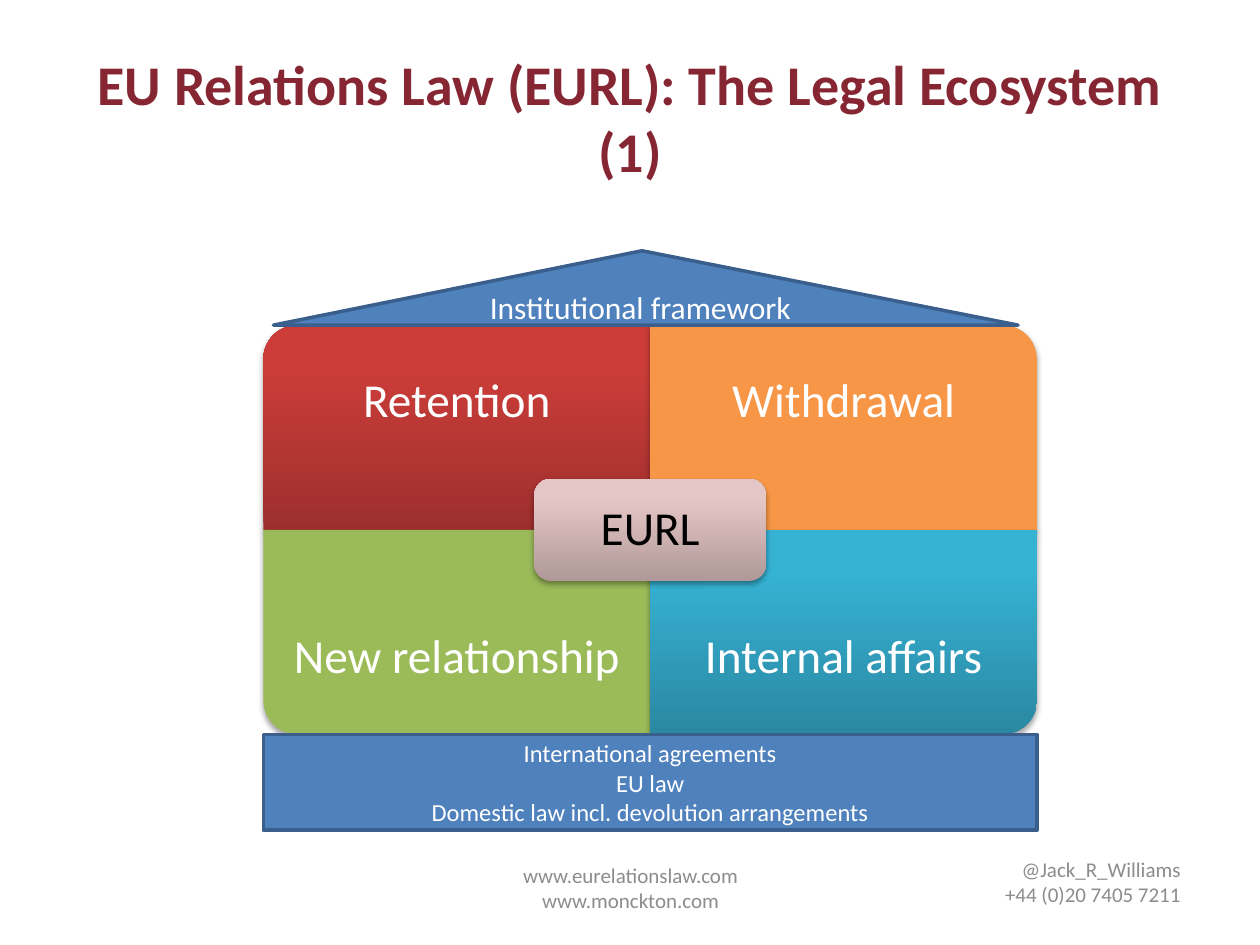
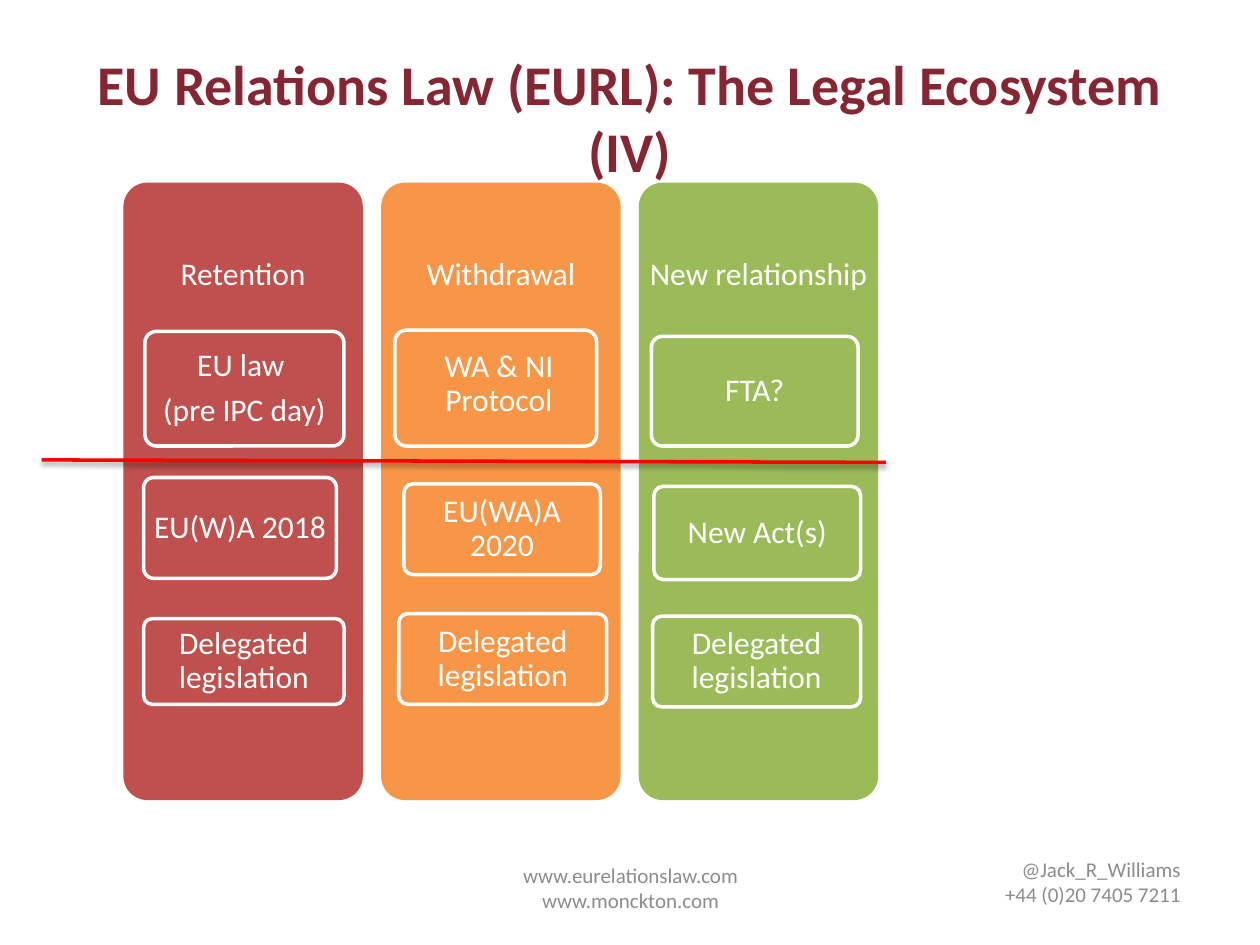
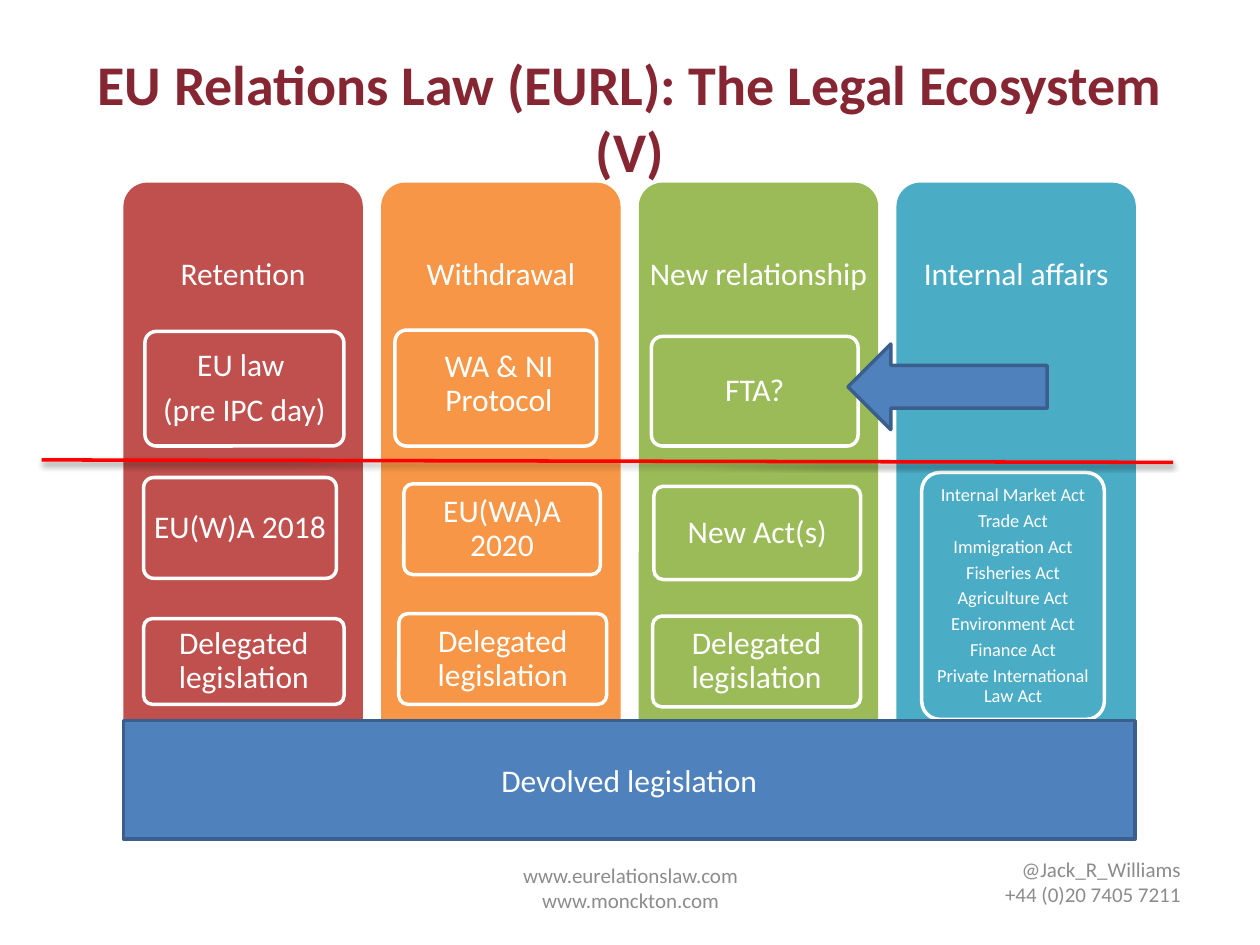
from lxml import etree
from pptx import Presentation
from pptx.dml.color import RGBColor
from pptx.enum.shapes import MSO_CONNECTOR, MSO_SHAPE
from pptx.enum.text import MSO_ANCHOR, PP_ALIGN
from pptx.oxml.ns import qn
from pptx.util import Inches, Pt

RECT = MSO_SHAPE.RECTANGLE
ROUNDED = MSO_SHAPE.ROUNDED_RECTANGLE
ONE_ROUND = MSO_SHAPE.ROUND_1_RECTANGLE
TRIANGLE = MSO_SHAPE.ISOSCELES_TRIANGLE
LEFT_ARROW = MSO_SHAPE.LEFT_ARROW
STRAIGHT = MSO_CONNECTOR.STRAIGHT
MIDDLE = MSO_ANCHOR.MIDDLE
CENTER, RIGHT = PP_ALIGN.CENTER, PP_ALIGN.RIGHT

FONT = "Calibri"
WHITE = RGBColor(0xFF, 0xFF, 0xFF)
BLACK = RGBColor(0x00, 0x00, 0x00)
CLARET = RGBColor(0x86, 0x26, 0x33)
GREY = RGBColor(0x8C, 0x8C, 0x8C)
BLUE = RGBColor(0x4F, 0x81, 0xBD)
DARK_BLUE = RGBColor(0x3A, 0x5F, 0x8C)
RED = RGBColor(0xC0, 0x50, 0x4D)
ORANGE = RGBColor(0xF7, 0x96, 0x46)
GREEN = RGBColor(0x9B, 0xBB, 0x59)
TEAL = RGBColor(0x4B, 0xAC, 0xC6)
LINE_RED = RGBColor(0xFF, 0x00, 0x00)
# Gradients run from bottom to top
RED_FADE = (RGBColor(0x9C, 0x2F, 0x2D), RGBColor(0xCC, 0x3D, 0x39))
TEAL_FADE = (RGBColor(0x2A, 0x88, 0xA2), RGBColor(0x36, 0xB2, 0xD3))
PINK_FADE = (RGBColor(0xB0, 0x99, 0x98), RGBColor(0xE5, 0xC6, 0xC6))

TITLE = "EU Relations Law (EURL): The Legal Ecosystem "
PLAIN_INSETS = (0.1, 0.05, 0.1, 0.05)
CARD_INSETS = (0.05, 0.04, 0.05, 0.04)
WIDE_INSETS = (0.13, 0.07, 0.13, 0.07)
DELEGATED = "Delegated legislation"

# Cards: offset from the column's corner, size, lines, font size, insets
COLUMNS = [
    ("Retention", RED, [
        ((0.17, 1.18, 1.58, 0.91), ["EU law ", "(pre IPC day)"], 18, CARD_INSETS),
        ((0.16, 2.34, 1.53, 0.8), ["EU(W)A 2018"], 18, CARD_INSETS),
        ((0.16, 3.46, 1.59, 0.68), [DELEGATED], 18, CARD_INSETS)]),
    ("Withdrawal", ORANGE, [
        ((0.11, 1.17, 1.6, 0.92), ["WA & NI Protocol"], 18, (0.17, 0.07, 0.12, 0.13)),
        ((0.18, 2.39, 1.56, 0.72), ["EU(WA)A 2020"], 18, WIDE_INSETS),
        ((0.14, 3.42, 1.65, 0.72), [DELEGATED], 18, WIDE_INSETS)]),
    ("New relationship", GREEN, [
        ((0.1, 1.22, 1.64, 0.87), ["FTA?"], 18, CARD_INSETS),
        ((0.12, 2.41, 1.64, 0.74), ["New Act(s)"], 18, CARD_INSETS),
        ((0.11, 3.44, 1.65, 0.72), [DELEGATED], 18, WIDE_INSETS)]),
    ("Internal affairs", TEAL, [
        ((0.2, 2.3, 1.45, 1.96),
         ["Internal Market Act", "Trade Act", "Immigration Act", "Fisheries Act",
          "Agriculture Act", "Environment Act", "Finance Act",
          "Private International Law Act"], 10.5, (0.03, 0.02, 0.03, 0.02))]),
]


def write(shape, lines, size, color=WHITE, align=CENTER, bold=False,
          insets=PLAIN_INSETS, tight=False):
    tf = shape.text_frame
    tf.word_wrap = True
    tf.vertical_anchor = MIDDLE
    (tf.margin_left, tf.margin_top,
     tf.margin_right, tf.margin_bottom) = map(Inches, insets)
    for i, line in enumerate(lines):
        p = tf.paragraphs[0] if i == 0 else tf.add_paragraph()
        p.text = line
        p.alignment = align
        if tight:
            p.line_spacing = 0.9
            p.space_after = Pt(0.33 * size)
        p.font.name, p.font.size = FONT, Pt(size)
        p.font.bold, p.font.color.rgb = bold, color


def add_text(s, box, lines, size, **style):
    write(s.shapes.add_textbox(*map(Inches, box)), lines, size, **style)


def add_box(s, kind, box, fill, line=None):
    """Add a shape filled with one colour, or with a (bottom, top) gradient."""
    sp = s.shapes.add_shape(kind, *map(Inches, box))
    sp.shadow.inherit = False
    if isinstance(fill, RGBColor):
        sp.fill.solid()
        sp.fill.fore_color.rgb = fill
    else:
        sp.fill.gradient()
        sp.fill.gradient_angle = 90
        for stop, color, position in zip(sp.fill.gradient_stops, fill, (0, 0.8)):
            stop.color.rgb, stop.position = color, position
        sp._element.spPr.find(qn("a:gradFill")).set("rotWithShape", "0")
    if line is None:
        sp.line.fill.background()
    else:
        sp.line.color.rgb, sp.line.width = line, Pt(2)
    return sp


def add_shadow(shape, opacity, distance):
    spPr = shape._element.spPr
    effects = spPr.find(qn("a:effectLst"))
    if effects is None:
        effects = etree.SubElement(spPr, qn("a:effectLst"))
    shadow = etree.SubElement(effects, qn("a:outerShdw"), blurRad=str(Pt(3.1)),
                              dist=str(Pt(distance)), dir="5400000", rotWithShape="0")
    color = etree.SubElement(shadow, qn("a:srgbClr"), val=str(BLACK))
    etree.SubElement(color, qn("a:alpha"), val=str(opacity * 1000))


def add_slide(prs, number):
    """Start a slide with the shared title and footers."""
    s = prs.slides.add_slide(prs.slide_layouts[6])
    add_text(s, (0.5, 0.3, 9, 1.25), [f"{TITLE}({number})"], 32, color=CLARET, bold=True)
    add_text(s, (3.42, 6.74, 3.17, 0.61),
             ["www.eurelationslaw.com", "www.monckton.com"], 12, color=GREY)
    add_text(s, (7.14, 6.66, 2.33, 0.67),
             ["@Jack_R_Williams", "+44 (0)20 7405 7211"], 12, color=GREY, align=RIGHT)
    return s


def add_quadrants(s, box):
    """Four tiles, each with its outer corner rounded, around a central label."""
    x, y, w, h = box
    tile_w, tile_h, label_h = w / 2, h / 2, 1.22
    tiles = [("Retention", RED_FADE, 0, 0, 270), ("Withdrawal", ORANGE, 1, 0, 0),
             ("New relationship", GREEN, 0, 1, 180), ("Internal affairs", TEAL_FADE, 1, 1, 90)]
    for label, fill, col, row, turn in tiles:
        left, top = x + col * tile_w, y + row * tile_h
        # A quarter turn swaps width and height about the tile's centre
        tw, th = (tile_h, tile_w) if turn % 180 else (tile_w, tile_h)
        tile = add_box(s, ONE_ROUND, (left + (tile_w - tw) / 2, top + (tile_h - th) / 2,
                                      tw, th), fill)
        tile.rotation = turn
        add_shadow(tile, 35, 1.8)
        label_top = top + row * (tile_h - label_h)
        add_text(s, (left, label_top, tile_w, label_h), [label], 27,
                 insets=(0.21,) * 4, tight=True)
    core_w, core_h = 0.3 * w, h / 4
    core = add_box(s, ROUNDED, (x + (w - core_w) / 2, y + (h - core_h) / 2,
                                core_w, core_h), PINK_FADE)
    add_shadow(core, 35, 1.8)
    write(core, ["EURL"], 27, color=BLACK, insets=(0.11,) * 4, tight=True)


def add_house(s, box):
    x, y, w, h = box
    roof_h, base_h = 0.59, 0.76
    add_quadrants(s, (x, y + roof_h, w, h - roof_h - base_h))
    roof = add_box(s, TRIANGLE, (x + 0.08, y, 5.91, roof_h), BLUE, DARK_BLUE)
    roof.adjustments[0] = 0.495
    write(roof, ["Institutional framework "], 18)
    base = add_box(s, RECT, (x, y + h - base_h, w, base_h), BLUE, DARK_BLUE)
    write(base, ["International agreements", "EU law",
                 "Domestic law incl. devolution arrangements"], 14)


def add_column(s, box, heading, color, cards):
    x, y, w, h = box
    add_box(s, ROUNDED, box, color).adjustments[0] = 0.1
    add_text(s, (x, y, w, 0.3 * h), [heading], 18, insets=(0.07,) * 4, tight=True)
    for (dx, dy, card_w, card_h), lines, size, insets in cards:
        card = add_box(s, ROUNDED, (x + dx, y + dy, card_w, card_h), color, WHITE)
        card.adjustments[0] = 0.1
        write(card, lines, size, insets=insets, tight=True)


def add_columns(s, columns, line_end):
    """Columns from left to right, crossed by a red dividing line."""
    for i, (heading, color, cards) in enumerate(columns):
        add_column(s, (0.98 + 2.045 * i, 1.45, 1.9, 4.9), heading, color, cards)
    divider = s.shapes.add_connector(STRAIGHT, *map(Inches, (0.33, 3.65, line_end, 3.67)))
    divider.line.color.rgb, divider.line.width = LINE_RED, Pt(2)
    add_shadow(divider, 38, 1.6)


def main():
    prs = Presentation()
    prs.slide_width, prs.slide_height = Inches(10), Inches(7.5)

    # Legal ecosystem as a house
    s = add_slide(prs, "1")
    add_house(s, (2.09, 1.99, 6.14, 4.6))

    # First three columns
    s = add_slide(prs, "IV")
    add_columns(s, COLUMNS[:3], 7.03)

    # All columns, resting on devolved legislation
    s = add_slide(prs, "V")
    add_columns(s, COLUMNS, 9.31)
    add_box(s, LEFT_ARROW, (6.73, 2.73, 1.58, 0.68), BLUE, DARK_BLUE)
    base = add_box(s, RECT, (0.98, 5.72, 8.03, 0.94), BLUE, DARK_BLUE)
    write(base, ["Devolved legislation"], 18)

    prs.save("out.pptx")


if __name__ == "__main__":
    main()
